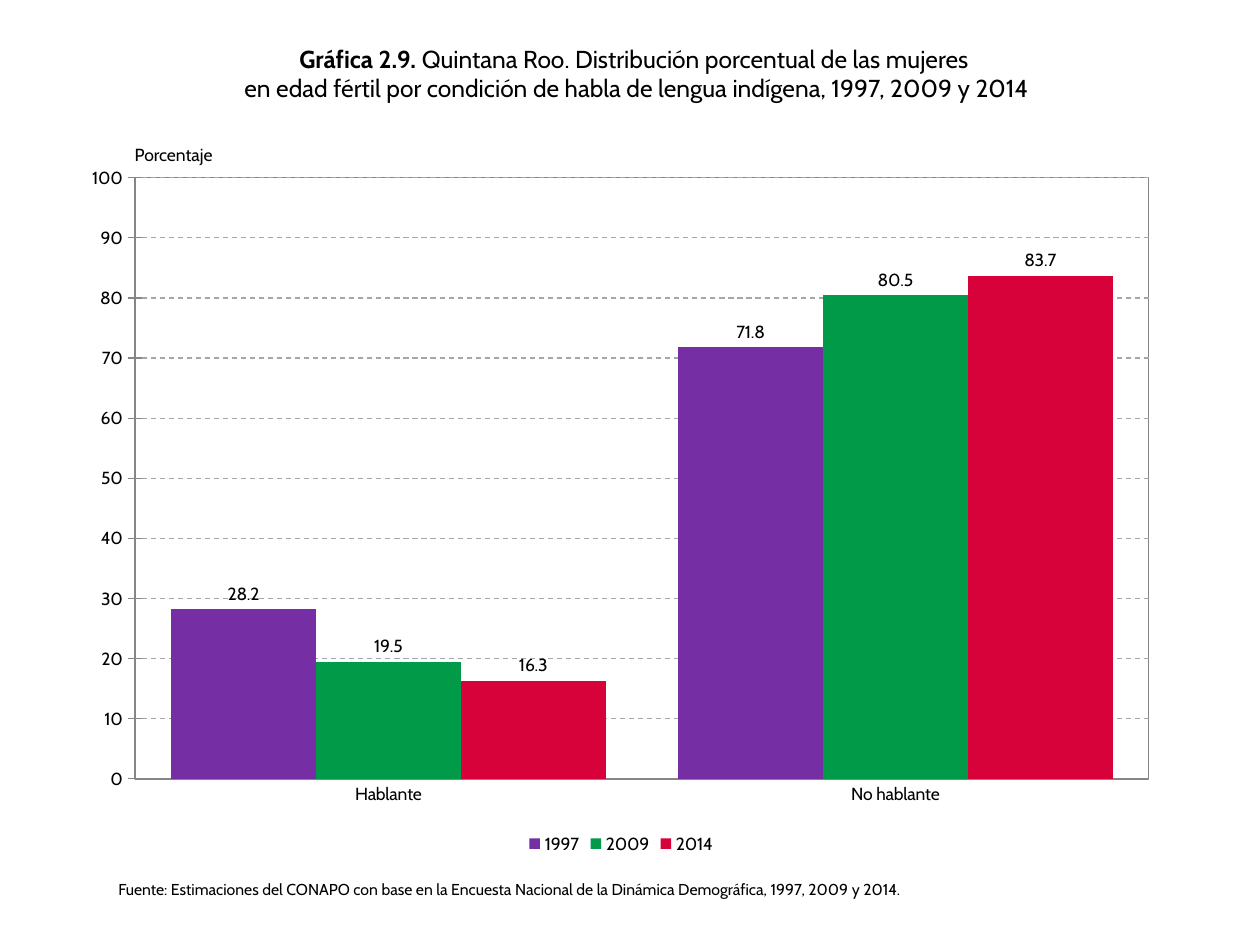
"""Build a slide with a clustered column chart of women by indigenous language."""
from lxml.etree import fromstring
from pptx import Presentation
from pptx.chart.data import CategoryChartData as ChartData
from pptx.dml.color import RGBColor as RGB
from pptx.enum.chart import XL_CHART_TYPE as Kind
from pptx.enum.chart import XL_LABEL_POSITION as Spot
from pptx.enum.chart import XL_LEGEND_POSITION as Side
from pptx.enum.chart import XL_TICK_MARK as Tick
from pptx.enum.dml import MSO_LINE as Dash
from pptx.enum.text import MSO_AUTO_SIZE as Fit
from pptx.enum.text import PP_ALIGN as Align
from pptx.oxml.ns import nsdecls, qn
from pptx.util import Pt

COLORS = {"text": "000000", "grid": "A6A6A6", "axis": "868686",
          "1997": "762EA4", "2009": "009A48", "2014": "D7023A"}
DATA = {"1997": (28.2, 71.8), "2009": (19.5, 80.5), "2014": (16.3, 83.7)}


def style(font, size):
    font.name = "Cabin"
    font.size = Pt(size)
    font.color.rgb = RGB.from_string(COLORS["text"])


def add_text(left, top, width, height, size, text=""):
    box = slide.shapes.add_textbox(Pt(left), Pt(top), Pt(width), Pt(height))
    frame = box.text_frame
    frame.word_wrap = True
    frame.auto_size = Fit.SHAPE_TO_FIT_TEXT
    para = frame.paragraphs[0]
    para.text = text
    style(para.font, size)
    return para


prs = Presentation()
prs.slide_width, prs.slide_height = Pt(720), Pt(540)
slide = prs.slides.add_slide(prs.slide_layouts[6])

title = add_text(25.2, 21.6, 677.5, 41, 14)
title.alignment = Align.CENTER
lead = title.add_run()
lead.text = "Gráfica 2.9. "
lead.font.bold = True
title.add_run().text = "Quintana Roo. Distribución porcentual de las mujeres "
title.add_line_break()
title.add_run().text = ("en edad fértil por condición de habla de lengua indígena, "
                        "1997, 2009 y 2014")
add_text(69.8, 78.5, 80.6, 19.4, 10, "Porcentaje")
add_text(60.5, 499, 601.2, 18, 9,
         "Fuente: Estimaciones del CONAPO con base en la Encuesta Nacional "
         "de la Dinámica Demográfica, 1997, 2009 y 2014.")

data = ChartData()
data.categories = ["Hablante", "No hablante"]
for name, vals in DATA.items():
    data.add_series(name, vals)
left, top, width, height = 40.3, 87.1, 629.3, 403.9
chart = slide.shapes.add_chart(Kind.COLUMN_CLUSTERED, Pt(left), Pt(top),
                               Pt(width), Pt(height), data).chart
style(chart.font, 10)
chart.has_title = False
chart.has_legend = True
chart.legend.position = Side.BOTTOM
chart.legend.include_in_layout = False

plot = chart.plots[0]
plot.gap_width = 50
plot.overlap = 0
plot.vary_by_categories = False
for bar in plot.series:
    bar.format.fill.solid()
    bar.format.fill.fore_color.rgb = RGB.from_string(COLORS[bar.name])
    labels = bar.data_labels
    labels.show_value = True
    labels.position = Spot.OUTSIDE_END
    labels.number_format = "#,##0.0"
    labels.number_format_is_linked = False
    style(labels.font, 10)

cat, val = chart.category_axis, chart.value_axis
cat.major_tick_mark = Tick.NONE
val.major_tick_mark = Tick.CROSS
val.minimum_scale, val.maximum_scale, val.major_unit = 0, 100, 10
val.tick_labels.number_format = "#,##0"
val.tick_labels.number_format_is_linked = False
val.has_major_gridlines = True
grid = val.major_gridlines.format.line
grid.dash_style = Dash.DASH
for line, hue in ((grid, "grid"), (cat.format.line, "axis"), (val.format.line, "axis")):
    line.width = Pt(0.75)
    line.color.rgb = RGB.from_string(COLORS[hue])

area = chart.element.find(".//" + qn("c:plotArea"))
for old in area.findall(qn("c:layout")):
    area.remove(old)
frame = {"x": (77.1 - left) / width, "y": (101.6 - top) / height,
         "w": 579.4 / width, "h": 343.5 / height}
modes = '<c:xMode val="edge"/><c:yMode val="edge"/>'
sizes = "".join(f'<c:{key} val="{part:.4f}"/>' for key, part in frame.items())
area.insert(0, fromstring(
    f'<c:layout {nsdecls("c")}><c:manualLayout><c:layoutTarget val="inner"/>'
    f'{modes}{sizes}</c:manualLayout></c:layout>'))
area.append(fromstring(
    f'<c:spPr {nsdecls("c", "a")}><a:noFill/><a:ln w="{Pt(0.75)}"><a:solidFill>'
    f'<a:srgbClr val="{COLORS["axis"]}"/></a:solidFill></a:ln></c:spPr>'))

prs.save("out.pptx")
